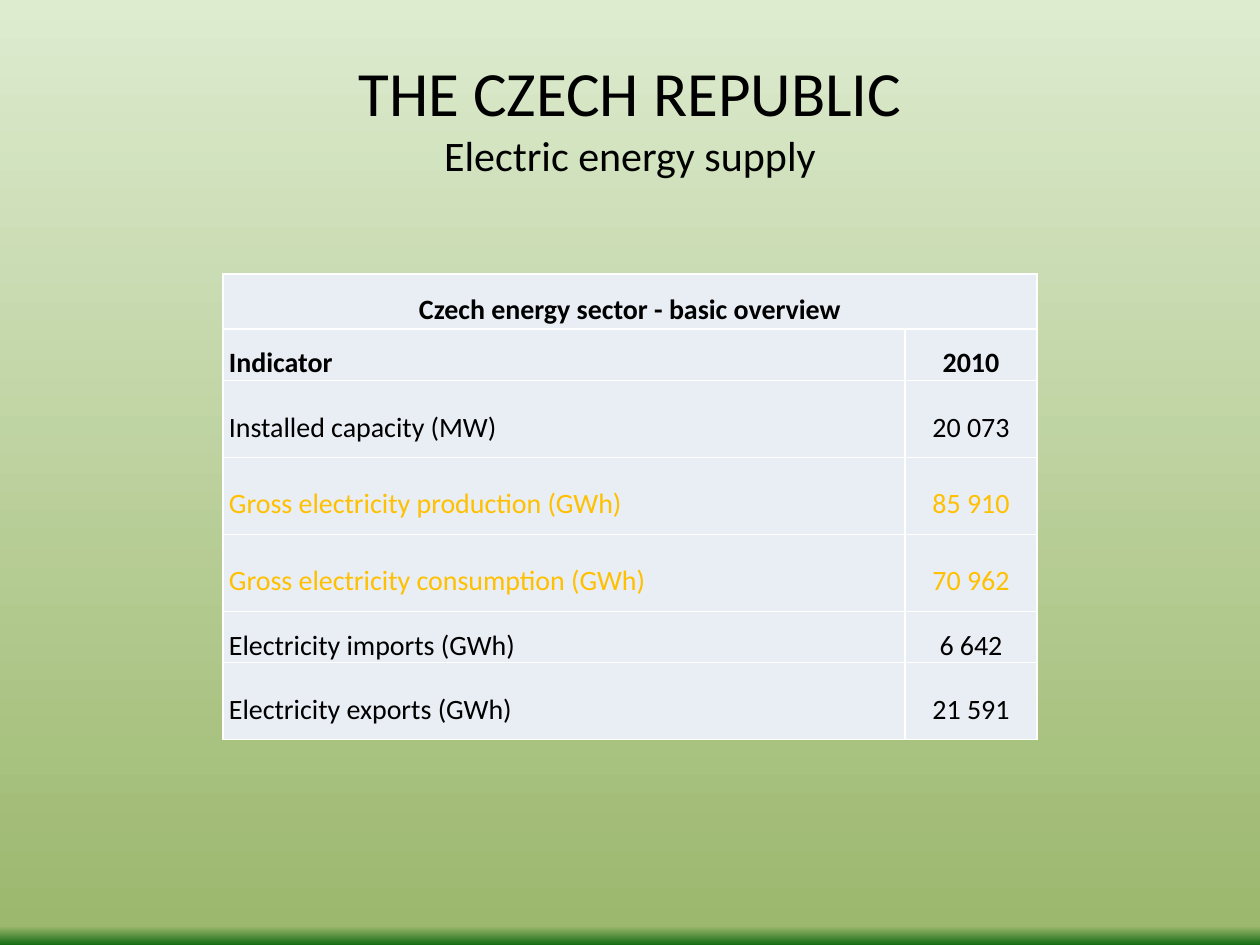
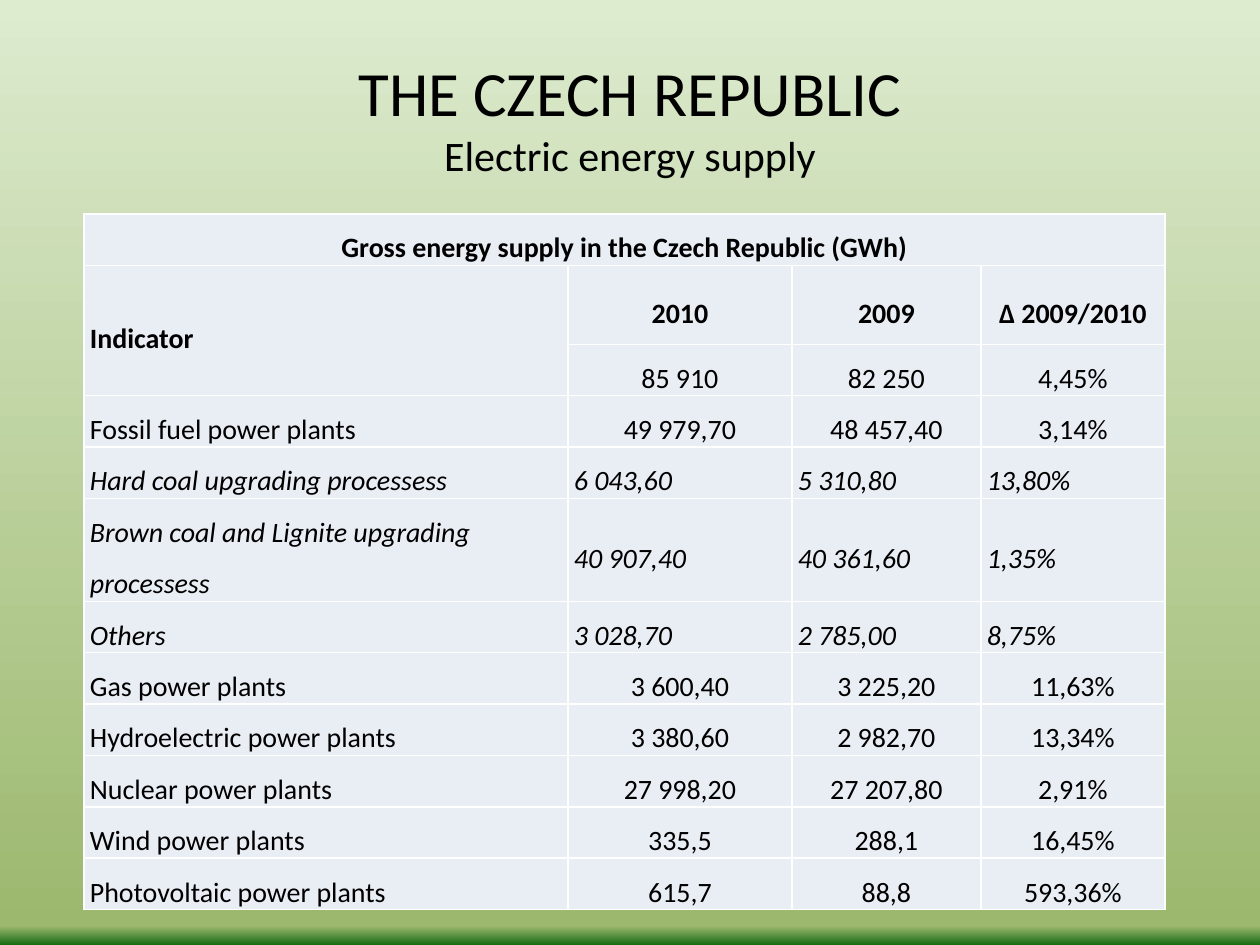
from copy import deepcopy

from lxml import etree
from pptx import Presentation
from pptx.dml.color import RGBColor
from pptx.enum.text import MSO_ANCHOR, PP_ALIGN
from pptx.oxml.ns import qn
from pptx.util import Pt

PX = 7257.6
FONT = "Calibri"
LEFT, CENTER = PP_ALIGN.LEFT, PP_ALIGN.CENTER
MIDDLE = MSO_ANCHOR.MIDDLE
TITLE_ONLY = 5
COLORS = {
    "sky": "DDEBCF",
    "meadow": "9CB86E",
    "grass": "156B13",
    "text": "000000",
    "highlight": "FFC000",
    "cell": "E9EDF4",
    "border": "FFFFFF",
}
BACKDROP = [(0, "sky"), (0.98, "meadow"), (1, "grass")]
TITLE_BOX = (63, 38, 1134, 157)
CELL_INSET = 6
ROW = 51
TALL_ROW = 77

OVERVIEW = [
    ("bold", 55, ["Czech energy sector - basic overview"]),
    ("bold", ROW, ["Indicator", "2010"]),
    ("plain", TALL_ROW, ["Installed capacity (MW)", "20 073"]),
    ("highlight", TALL_ROW, ["Gross electricity production (GWh)", "85 910"]),
    ("highlight", TALL_ROW, ["Gross electricity consumption (GWh)", "70 962"]),
    ("plain", ROW, ["Electricity imports (GWh)", "6 642"]),
    ("plain", TALL_ROW, ["Electricity exports (GWh)", "21 591"]),
]
SUPPLY = [
    ("bold", ROW, ["Gross energy supply in the Czech Republic (GWh)"]),
    ("bold", 79, ["Indicator", "2010", "2009", "∆ 2009/2010"]),
    ("plain", ROW, ["", "85 910", "82 250", "4,45%"]),
    ("plain", ROW, ["Fossil fuel power plants", "49 979,70", "48 457,40", "3,14%"]),
    ("italic", ROW, ["Hard coal upgrading processess", "6 043,60", "5 310,80", "13,80%"]),
    ("italic", 2 * ROW, ["Brown coal and Lignite upgrading processess",
                         "40 907,40", "40 361,60", "1,35%"]),
    ("italic", ROW, ["Others", "3 028,70", "2 785,00", "8,75%"]),
    ("plain", ROW, ["Gas power plants", "3 600,40", "3 225,20", "11,63%"]),
    ("plain", ROW, ["Hydroelectric power plants", "3 380,60", "2 982,70", "13,34%"]),
    ("plain", ROW, ["Nuclear power plants", "27 998,20", "27 207,80", "2,91%"]),
    ("plain", ROW, ["Wind power plants", "335,5", "288,1", "16,45%"]),
    ("plain", ROW, ["Photovoltaic power plants", "615,7", "88,8", "593,36%"]),
]


def px(length):
    return round(length * PX)


def color(name):
    return RGBColor.from_string(COLORS[name])


def add_span(para, text, size, tint="text", bold=False, italic=False):
    span = para.add_run()
    span.text = text
    font = span.font
    font.name, font.size, font.bold, font.italic = FONT, Pt(size), bold, italic
    font.color.rgb = color(tint)
    return span


def paint_backdrop(master):
    fill = master.background.fill
    fill.gradient()
    fill.gradient_angle = 270
    stop_list = master.element.find(".//" + qn("p:bg")).find(".//" + qn("a:gsLst"))
    stop_list.append(deepcopy(stop_list[-1]))
    for stop, (position, name) in zip(fill.gradient_stops, BACKDROP):
        stop.position = position
        stop.color.rgb = color(name)


def place_title(page, box):
    title = page.shapes.title
    title.left, title.top, title.width, title.height = map(px, box)
    title.text_frame.vertical_anchor = MIDDLE
    para = title.text_frame.paragraphs[0]
    para.alignment = CENTER
    country = add_span(para, "THE CZECH REPUBLIC", 36)
    para.add_line_break()
    line_break = title.element.find(".//" + qn("a:br"))
    line_break.append(deepcopy(country.font._element))
    add_span(para, "Electric energy supply", 24)


def add_borders(cell):
    properties = cell._tc.get_or_add_tcPr()
    for side in ("lnL", "lnR", "lnT", "lnB"):
        line = etree.SubElement(properties, qn("a:" + side), w=str(Pt(1)))
        fill = etree.SubElement(line, qn("a:solidFill"))
        etree.SubElement(fill, qn("a:srgbClr"), val=COLORS["border"])


def style_cell(cell):
    add_borders(cell)
    cell.fill.solid()
    cell.fill.fore_color.rgb = color("cell")
    cell.vertical_anchor = MIDDLE
    cell.margin_left = cell.margin_right = px(CELL_INSET)
    cell.margin_top = cell.margin_bottom = 0


def write_cell(cell, text, style, alignment):
    para = cell.text_frame.paragraphs[0]
    para.alignment = alignment
    para.line_spacing = 1.5
    tint = "highlight" if style == "highlight" else "text"
    add_span(para, text, 16, tint, style == "bold", style == "italic")


def place_table(page, left, top, widths, rows):
    height = sum(row_height for _, row_height, _ in rows)
    table = page.shapes.add_table(len(rows), len(widths), px(left), px(top),
                                  px(sum(widths)), px(height)).table
    table.first_row = table.horz_banding = False
    for column, width in zip(table.columns, widths):
        column.width = px(width)
    for cell in table.iter_cells():
        style_cell(cell)
    for index, (style, row_height, texts) in enumerate(rows):
        table.rows[index].height = px(row_height)
        is_caption = len(texts) == 1
        if is_caption:
            table.cell(index, 0).merge(table.cell(index, len(widths) - 1))
        for position, text in enumerate(texts):
            cell = table.cell(index, position)
            if not text:
                table.cell(index - 1, position).merge(cell)
                continue
            centered = is_caption or (position > 0 and style != "italic")
            write_cell(cell, text, style, CENTER if centered else LEFT)


def add_table_page(deck, left, top, widths, rows):
    page = deck.slides.add_slide(deck.slide_layouts[TITLE_ONLY])
    place_title(page, TITLE_BOX)
    place_table(page, left, top, widths, rows)


def main():
    deck = Presentation()
    deck.slide_width, deck.slide_height = px(1260), px(945)
    paint_backdrop(deck.slide_master)
    add_table_page(deck, 223, 274, (682, 132), OVERVIEW)
    add_table_page(deck, 84, 214, (484, 224, 189, 184), SUPPLY)
    deck.save("out.pptx")


if __name__ == "__main__":
    main()
